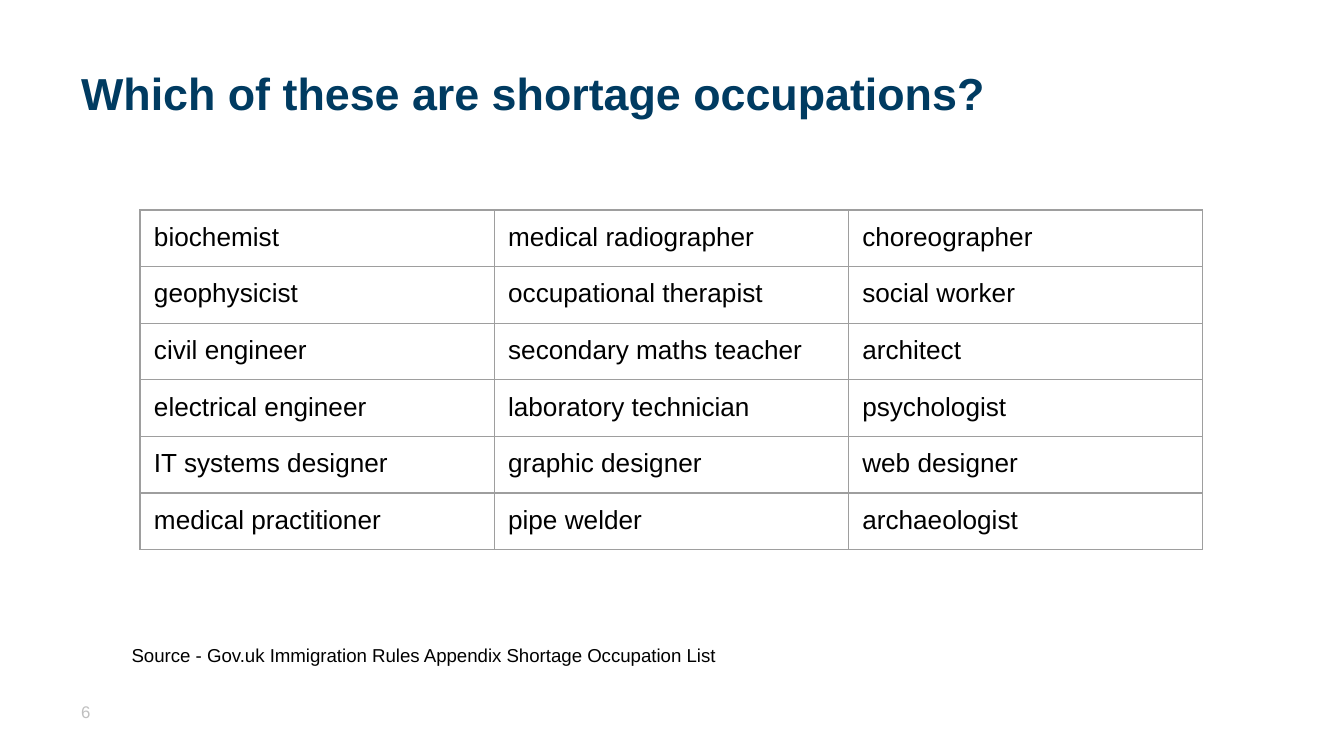
from dataclasses import dataclass

from lxml import etree
from pptx import Presentation
from pptx.dml.color import RGBColor
from pptx.enum.text import MSO_ANCHOR
from pptx.oxml.ns import qn
from pptx.util import Pt

TOP, MIDDLE = MSO_ANCHOR.TOP, MSO_ANCHOR.MIDDLE
PX = 9525  # EMU per px, 96 px to the inch


@dataclass(frozen=True)
class Theme:
    font: str = "Arial"
    navy: str = "003B61"
    black: str = "000000"
    grey: str = "BFBFBF"
    border: str = "9E9E9E"
    title: int = 24
    cell: int = 14
    source: int = 10
    number: int = 9


theme = Theme()


def write(holder, text, size, color, inset, anchor=TOP, bold=False):
    """Fill a text box or table cell; inset is (horizontal, vertical) in px."""
    tf = holder.text_frame
    tf.word_wrap = True
    tf.text = text
    # A cell carries its own margins and anchor; a text box keeps them on its frame.
    box = tf if hasattr(holder, "shape_type") else holder
    box.margin_left = box.margin_right = inset[0] * PX
    box.margin_top = box.margin_bottom = inset[1] * PX
    box.vertical_anchor = anchor
    font = tf.paragraphs[0].font
    font.name, font.size, font.bold = theme.font, Pt(size), bold
    font.color.rgb = RGBColor.from_string(color)


def add_borders(cell, color, width):
    tcPr = cell._tc.get_or_add_tcPr()
    for side in ("a:lnL", "a:lnR", "a:lnT", "a:lnB"):
        ln = etree.SubElement(tcPr, qn(side), w=str(Pt(width)))
        fill = etree.SubElement(ln, qn("a:solidFill"))
        etree.SubElement(fill, qn("a:srgbClr"), val=color)


prs = Presentation()
prs.slide_width, prs.slide_height = 960 * PX, 540 * PX
s = prs.slides.add_slide(prs.slide_layouts[6])

# Title, slide number and source line
texts = [
    ((48, 21, 691, 90), "Which of these are shortage occupations?",
     theme.title, theme.navy, (10, 5), MIDDLE, True),
    ((48, 496, 48, 29), "6", theme.number, theme.grey, (10, 5), TOP, False),
    ((84, 452, 720, 36),
     "Source - Gov.uk Immigration Rules Appendix Shortage Occupation List",
     theme.source, theme.black, (10, 10), TOP, False),
]
for at, *content in texts:
    write(s.shapes.add_textbox(*(v * PX for v in at)), *content)

# Occupations table
occupations = [
    ("biochemist", "medical radiographer", "choreographer"),
    ("geophysicist", "occupational therapist", "social worker"),
    ("civil engineer", "secondary maths teacher", "architect"),
    ("electrical engineer", "laboratory technician", "psychologist"),
    ("IT systems designer", "graphic designer", "web designer"),
    ("medical practitioner", "pipe welder", "archaeologist"),
]
COL_W, ROW_H = 253, 40
n_rows, n_cols = len(occupations), len(occupations[0])
table = s.shapes.add_table(n_rows, n_cols, 100 * PX, 150 * PX,
                           n_cols * COL_W * PX, n_rows * ROW_H * PX).table
table.first_row = table.horz_banding = False
for r, row in enumerate(occupations):
    for c, occupation in enumerate(row):
        cell = table.cell(r, c)
        write(cell, occupation, theme.cell, theme.black, (10, 9))
        add_borders(cell, theme.border, 0.75)
        cell.fill.background()

prs.save("out.pptx")
